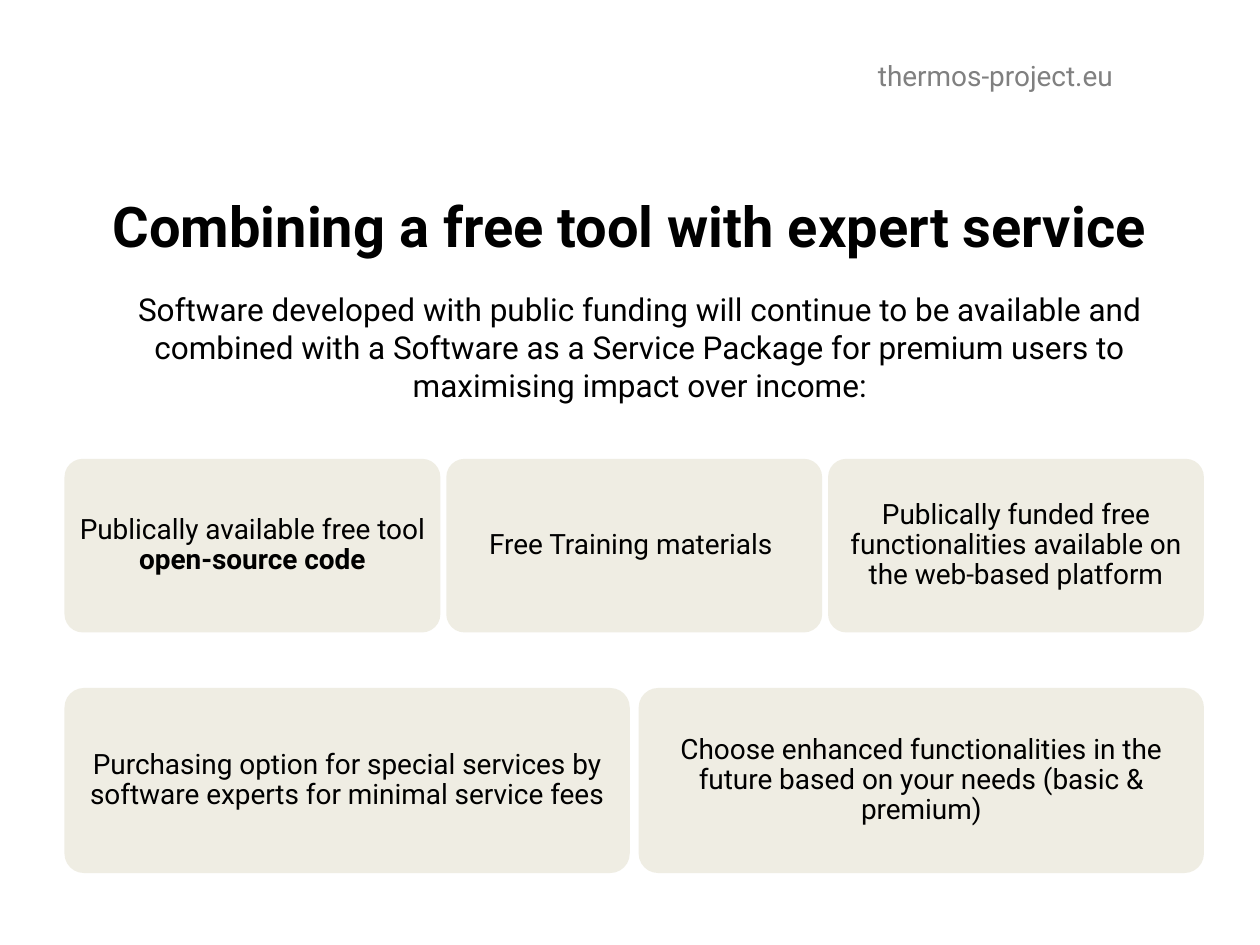
"""Build a slide on pairing a free tool with expert service."""
from dataclasses import dataclass

import lxml.etree
import pptx
import pptx.dml.color
import pptx.enum.shapes
import pptx.enum.text
import pptx.oxml.ns
import pptx.util

Cm = pptx.util.Cm
Align = pptx.enum.text.PP_ALIGN
HUES = {"card": "EEECE1", "ink": "000000", "grey": "808080"}
FONT = "Roboto"
LEFT = 1.3
WIDTH = 22.97


@dataclass
class Run:
    """A piece of text with one look."""
    text: str
    size: float = 16
    bold: bool = False
    hue: str = "ink"


@dataclass
class Label:
    """A plain text box, in centimetres."""
    box: tuple[float, float, float, float]
    run: Run
    align: Align = Align.CENTER
    inset: tuple[float, float] = (0.25, 0.13)


@dataclass
class Row:
    """A row of equal cards, in centimetres."""
    top: float
    height: float
    gap: float
    cards: list[list[Run]]


LABELS = [
    Label((17.7, 1.19, 4.83, 0.69), Run("thermos-project.eu", hue="grey"),
          Align.LEFT, (0, 0)),
    Label((0, 3.73, 25.4, 1.63),
          Run("Combining a free tool with expert service", 32, True)),
    Label((1.7, 5.72, 22.4, 3.33),
          Run("Software developed with public funding will continue to be "
              "available and combined with a Software as a Service Package "
              "for premium users to maximising impact over income:", 18)),
]

ROWS = [
    Row(9.25, 3.5, 0.12, [
        [Run("Publically available free tool "),
         Run("open-source code", bold=True)],
        [Run("Free Training materials ")],
        [Run("Publically funded free functionalities available on the "
             "web-based platform")],
    ]),
    Row(13.87, 3.73, 0.18, [
        [Run("Purchasing option for special services by software experts "
             "for minimal service fees")],
        [Run("Choose enhanced functionalities in the future based on your "
             "needs (basic & premium)")],
    ]),
]


def tint(hue: str) -> pptx.dml.color.RGBColor:
    """Return a named colour."""
    return pptx.dml.color.RGBColor.from_string(HUES[hue])


def write(frame, runs: list[Run], align: Align,
          inset: tuple[float, float]):
    """Fill a text frame run by run and return its paragraph."""
    frame.word_wrap = True
    frame.margin_left = frame.margin_right = Cm(inset[0])
    frame.margin_top = frame.margin_bottom = Cm(inset[1])
    para = frame.paragraphs[0]
    para.alignment = align
    for item in runs:
        run = para.add_run()
        run.text = item.text
        run.font.name = FONT
        run.font.size = pptx.util.Pt(item.size)
        run.font.bold = item.bold
        run.font.color.rgb = tint(item.hue)
    return para


def draw_label(slide, label: Label) -> None:
    """Add one text box."""
    box = slide.shapes.add_textbox(*map(Cm, label.box))
    write(box.text_frame, [label.run], label.align, label.inset)


def draw_row(slide, row: Row) -> None:
    """Add one row of rounded cards."""
    count = len(row.cards)
    width = (WIDTH - row.gap * (count - 1)) / count
    for spot, runs in enumerate(row.cards):
        left = LEFT + spot * (width + row.gap)
        card = slide.shapes.add_shape(
            pptx.enum.shapes.MSO_SHAPE.ROUNDED_RECTANGLE,
            Cm(left), Cm(row.top), Cm(width), Cm(row.height))
        card.adjustments[0] = 0.105
        card.shadow.inherit = False
        card.line.fill.background()
        card.fill.solid()
        card.fill.fore_color.rgb = tint("card")
        shade = card.fill._xPr.find(".//" + pptx.oxml.ns.qn("a:srgbClr"))
        lxml.etree.SubElement(
            shade, pptx.oxml.ns.qn("a:alpha"), val="90000")
        frame = card.text_frame
        frame.vertical_anchor = pptx.enum.text.MSO_ANCHOR.MIDDLE
        para = write(frame, runs, Align.CENTER, (0.17, 0.17))
        para.line_spacing = 0.9


def main() -> None:
    """Build and save the slide."""
    deck = pptx.Presentation()
    deck.slide_width, deck.slide_height = Cm(25.4), Cm(19.05)
    slide = deck.slides.add_slide(deck.slide_layouts[6])
    for row in ROWS:
        draw_row(slide, row)
    for label in LABELS:
        draw_label(slide, label)
    deck.save("out.pptx")


if __name__ == "__main__":
    main()
